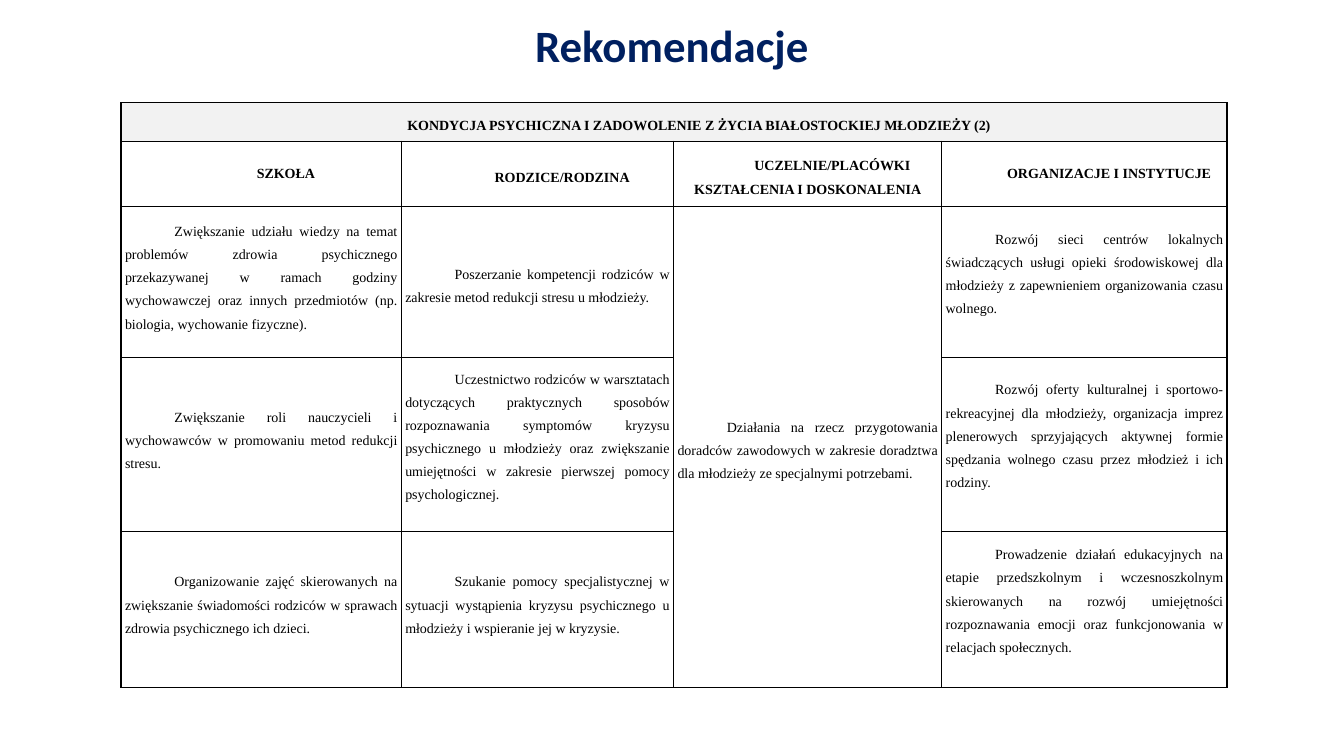
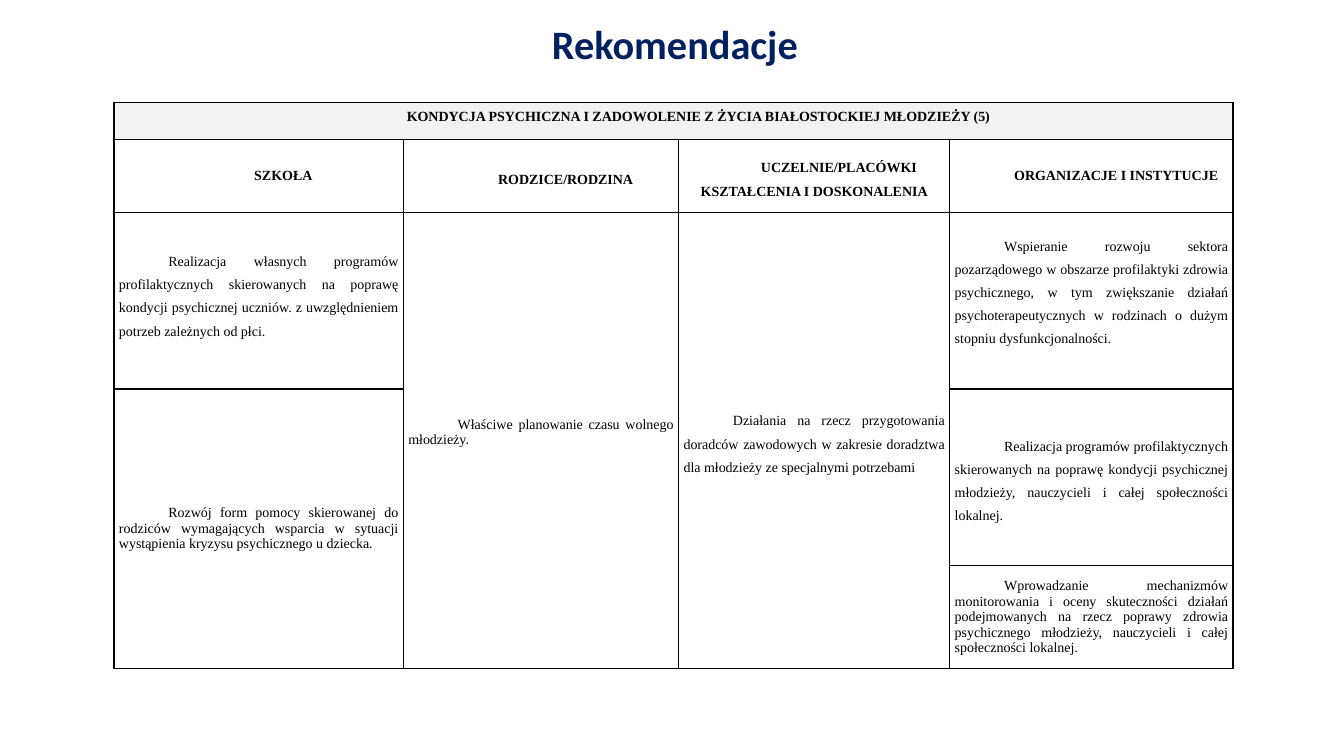
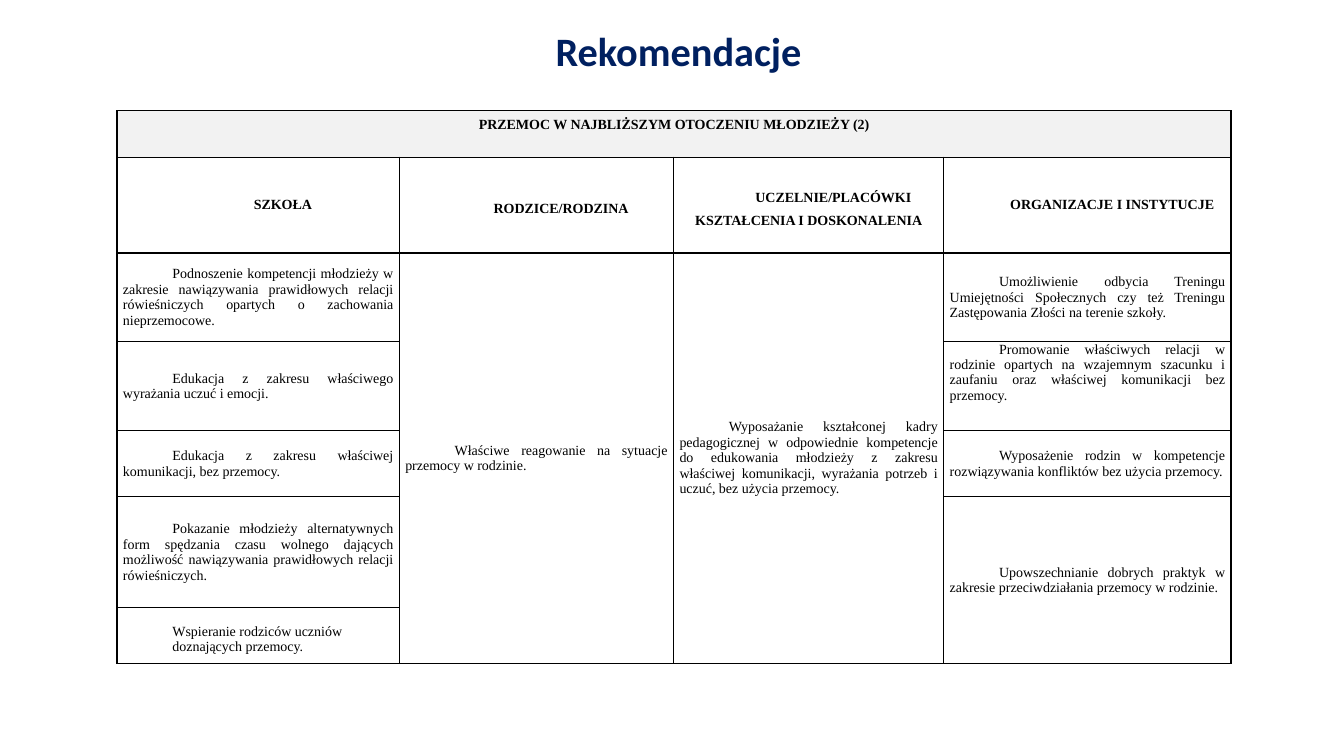
from dataclasses import dataclass

from lxml.etree import SubElement
from pptx import Presentation
from pptx.dml.color import RGBColor
from pptx.enum.text import MSO_ANCHOR, PP_ALIGN
from pptx.oxml.ns import qn
from pptx.slide import Slide
from pptx.table import Table, _Cell
from pptx.util import Inches, Pt

# Shared style
NAVY, BLACK, HEADING_GREY = "002060", "000000", "F2F2F2"
TITLE_FONT, TABLE_FONT = "Calibri", "Times New Roman"
TABLE_SIZE = 10
FIRST_LINE_INDENT = 0.49
BORDER_WIDTH = 1
LINE, WIDE_LINE = 0.16, 0.24  # height of one line at single and 1.5 spacing
SINGLE, WIDE = 1.0, 1.5


@dataclass
class Entry:
    """One table cell; space_below keeps room under its text."""
    row: int
    column: int
    text: str
    spacing: float = WIDE
    space_below: float = 0
    space_above: float = 0
    row_span: int = 1
    column_span: int = 1
    align: PP_ALIGN = PP_ALIGN.JUSTIFY
    anchor: MSO_ANCHOR = MSO_ANCHOR.MIDDLE
    indent: float = FIRST_LINE_INDENT
    bold: bool = False
    fill: str = ""


@dataclass
class TitleBox:
    left: float
    top: float
    width: float
    height: float
    size: float


@dataclass
class Recommendations:
    title: TitleBox
    left: float
    top: float
    columns: list[float]
    rows: list[float]
    side_margin: float
    heading: Entry
    entries: list[Entry]


def heading(text: str, above: float = 0, below: float = 0,
            indent: float = FIRST_LINE_INDENT) -> Entry:
    return Entry(0, 0, text, SINGLE, below, above, column_span=4,
                 align=PP_ALIGN.CENTER, indent=indent, bold=True, fill=HEADING_GREY)


# Column headers, the same in every table
COLUMN_HEADERS = [
    Entry(1, column, text, spacing, align=PP_ALIGN.CENTER, bold=True)
    for column, (text, spacing) in enumerate([
        ("SZKOŁA", SINGLE),
        ("RODZICE/RODZINA", WIDE),
        ("UCZELNIE/PLACÓWKI KSZTAŁCENIA I DOSKONALENIA", WIDE),
        ("ORGANIZACJE I INSTYTUCJE", SINGLE),
    ])
]

# Content
SLIDES = [
    Recommendations(
        TitleBox(2.75, 0.18, 7.83, 0.59, 32), 1.2, 1.02,
        [2.78, 2.7, 2.66, 2.83], [0.38, 0.65, 1.5, 1.6, 1.55], 0.04,
        heading("KONDYCJA PSYCHICZNA I ZADOWOLENIE Z ŻYCIA BIAŁOSTOCKIEJ MŁODZIEŻY (2)",
                above=0.08),
        [
            Entry(2, 0, "Zwiększanie udziału wiedzy na temat problemów zdrowia psychicznego "
                        "przekazywanej w ramach godziny wychowawczej oraz innych przedmiotów "
                        "(np. biologia, wychowanie fizyczne).", space_below=LINE),
            Entry(2, 1, "Poszerzanie kompetencji rodziców w zakresie metod redukcji stresu "
                        "u młodzieży."),
            Entry(2, 2, "Działania na rzecz przygotowania doradców zawodowych w zakresie "
                        "doradztwa dla młodzieży ze specjalnymi potrzebami.", row_span=3),
            Entry(2, 3, "Rozwój sieci centrów lokalnych świadczących usługi opieki "
                        "środowiskowej dla młodzieży z zapewnieniem organizowania czasu "
                        "wolnego.", space_below=WIDE_LINE),
            Entry(3, 0, "Zwiększanie roli nauczycieli i wychowawców w promowaniu metod "
                        "redukcji stresu.", space_below=LINE),
            Entry(3, 1, "Uczestnictwo rodziców w warsztatach dotyczących praktycznych "
                        "sposobów rozpoznawania symptomów kryzysu psychicznego u młodzieży "
                        "oraz zwiększanie umiejętności w zakresie pierwszej pomocy "
                        "psychologicznej.", space_below=0.22),
            Entry(3, 3, "Rozwój oferty kulturalnej i sportowo-rekreacyjnej dla młodzieży, "
                        "organizacja imprez plenerowych sprzyjających aktywnej formie "
                        "spędzania wolnego czasu przez młodzież i ich rodziny.",
                  space_below=WIDE_LINE),
            Entry(4, 0, "Organizowanie zajęć skierowanych na zwiększanie świadomości "
                        "rodziców w sprawach zdrowia psychicznego ich dzieci.",
                  space_below=LINE),
            Entry(4, 1, "Szukanie pomocy specjalistycznej w sytuacji wystąpienia kryzysu "
                        "psychicznego u młodzieży i wspieranie jej w kryzysie.",
                  space_below=LINE),
            Entry(4, 3, "Prowadzenie działań edukacyjnych na etapie przedszkolnym "
                        "i wczesnoszkolnym skierowanych na rozwój umiejętności rozpoznawania "
                        "emocji oraz funkcjonowania w relacjach społecznych.",
                  space_below=WIDE_LINE),
        ]),
    Recommendations(
        TitleBox(2.76, 0.18, 7.87, 0.56, 28.8), 1.13, 1.02,
        [2.87, 2.73, 2.69, 2.81], [0.36, 0.73, 1.75, 1.75, 1.02], 0.05,
        heading("KONDYCJA PSYCHICZNA I ZADOWOLENIE Z ŻYCIA BIAŁOSTOCKIEJ MŁODZIEŻY (5)",
                below=0.08),
        [
            Entry(2, 0, "Realizacja własnych programów profilaktycznych skierowanych na "
                        "poprawę kondycji psychicznej uczniów. z uwzględnieniem potrzeb "
                        "zależnych od płci.", space_below=LINE),
            Entry(2, 1, "Właściwe planowanie czasu wolnego młodzieży.", SINGLE, LINE,
                  row_span=3),
            Entry(2, 2, "Działania na rzecz przygotowania doradców zawodowych w zakresie "
                        "doradztwa dla młodzieży ze specjalnymi potrzebami", row_span=3),
            Entry(2, 3, "Wspieranie rozwoju sektora pozarządowego w obszarze profilaktyki "
                        "zdrowia psychicznego, w tym zwiększanie działań "
                        "psychoterapeutycznych w rodzinach o dużym stopniu "
                        "dysfunkcjonalności.", space_below=WIDE_LINE),
            Entry(3, 0, "Rozwój form pomocy skierowanej do rodziców wymagających wsparcia "
                        "w sytuacji wystąpienia kryzysu psychicznego u dziecka.", SINGLE,
                  row_span=2),
            Entry(3, 3, "Realizacja programów profilaktycznych skierowanych na poprawę "
                        "kondycji psychicznej młodzieży, nauczycieli i całej społeczności "
                        "lokalnej."),
            Entry(4, 3, "Wprowadzanie mechanizmów monitorowania i oceny skuteczności działań "
                        "podejmowanych na rzecz poprawy zdrowia psychicznego młodzieży, "
                        "nauczycieli i całej społeczności lokalnej.", SINGLE),
        ]),
    Recommendations(
        TitleBox(2.77, 0.25, 7.92, 0.56, 28.8), 1.16, 1.1,
        [2.8, 2.72, 2.68, 2.85], [0.46, 0.95, 0.88, 0.88, 0.66, 1.1, 0.55], 0.06,
        heading("PRZEMOC W NAJBLIŻSZYM OTOCZENIU MŁODZIEŻY (2)", below=0.18, indent=0),
        [
            Entry(2, 0, "Podnoszenie kompetencji młodzieży w zakresie nawiązywania "
                        "prawidłowych relacji rówieśniczych opartych o zachowania "
                        "nieprzemocowe.", SINGLE),
            Entry(2, 1, "Właściwe reagowanie na sytuacje przemocy w rodzinie.", SINGLE,
                  row_span=5),
            Entry(2, 2, "Wyposażanie kształconej kadry pedagogicznej w odpowiednie "
                        "kompetencje do edukowania młodzieży z zakresu właściwej "
                        "komunikacji, wyrażania potrzeb i uczuć, bez użycia przemocy.",
                  SINGLE, row_span=5),
            Entry(2, 3, "Umożliwienie odbycia Treningu Umiejętności Społecznych czy też "
                        "Treningu Zastępowania Złości na terenie szkoły.", SINGLE),
            Entry(3, 0, "Edukacja z zakresu właściwego wyrażania uczuć i emocji.", SINGLE),
            Entry(3, 3, "Promowanie właściwych relacji w rodzinie opartych na wzajemnym "
                        "szacunku i zaufaniu oraz właściwej komunikacji bez przemocy.",
                  SINGLE, anchor=MSO_ANCHOR.TOP),
            Entry(4, 0, "Edukacja z zakresu właściwej komunikacji, bez przemocy.", SINGLE),
            Entry(4, 3, "Wyposażenie rodzin w kompetencje rozwiązywania konfliktów bez "
                        "użycia przemocy.", SINGLE),
            Entry(5, 0, "Pokazanie młodzieży alternatywnych form spędzania czasu wolnego "
                        "dających możliwość nawiązywania prawidłowych relacji "
                        "rówieśniczych.", SINGLE),
            Entry(5, 3, "Upowszechnianie dobrych praktyk w zakresie przeciwdziałania "
                        "przemocy w rodzinie.", SINGLE, row_span=2),
            Entry(6, 0, "Wspieranie rodziców uczniów\ndoznających przemocy."),
        ]),
]


def color(value: str) -> RGBColor:
    return RGBColor.from_string(value)


def style_span(span, font: str, size: float, ink: str, bold: bool) -> None:
    span.font.name = font
    span.font.size = Pt(size)
    span.font.bold = bold
    span.font.color.rgb = color(ink)


def add_title(page: Slide, title: TitleBox) -> None:
    box = page.shapes.add_textbox(Inches(title.left), Inches(title.top),
                                  Inches(title.width), Inches(title.height))
    frame = box.text_frame
    frame.word_wrap = True
    frame.vertical_anchor = MSO_ANCHOR.MIDDLE
    frame.text = "Rekomendacje"
    para = frame.paragraphs[0]
    para.alignment = PP_ALIGN.CENTER
    para.line_spacing = 0.9
    style_span(para.runs[0], TITLE_FONT, title.size, NAVY, True)


def prepare_cell(cell: _Cell, side_margin: float) -> None:
    """Set margins, black borders and an empty fill."""
    cell.margin_left = cell.margin_right = Inches(side_margin)
    cell.margin_top = cell.margin_bottom = 0
    properties = cell._tc.get_or_add_tcPr()
    for side in ("a:lnL", "a:lnR", "a:lnT", "a:lnB"):
        line = SubElement(properties, qn(side), w=str(Pt(BORDER_WIDTH)))
        SubElement(SubElement(line, qn("a:solidFill")), qn("a:srgbClr"), val=BLACK)
    cell.fill.background()


def fill_cell(table: Table, entry: Entry) -> None:
    cell = table.cell(entry.row, entry.column)
    if entry.row_span > 1 or entry.column_span > 1:
        cell.merge(table.cell(entry.row + entry.row_span - 1,
                              entry.column + entry.column_span - 1))
    cell.vertical_anchor = entry.anchor
    cell.margin_top = Inches(entry.space_above)
    cell.margin_bottom = Inches(entry.space_below)
    if entry.fill:
        cell.fill.solid()
        cell.fill.fore_color.rgb = color(entry.fill)
    cell.text_frame.text = entry.text
    for index, para in enumerate(cell.text_frame.paragraphs):
        para.alignment = entry.align
        para.line_spacing = SINGLE if index else entry.spacing
        para._p.get_or_add_pPr().set("indent", str(Inches(entry.indent)))
        style_span(para.runs[0], TABLE_FONT, TABLE_SIZE, BLACK, entry.bold)


def add_recommendations(page: Slide, content: Recommendations) -> None:
    frame = page.shapes.add_table(
        len(content.rows), len(content.columns), Inches(content.left), Inches(content.top),
        Inches(sum(content.columns)), Inches(sum(content.rows)))
    table = frame.table
    table.first_row = table.horz_banding = False
    for column, width in zip(table.columns, content.columns):
        column.width = Inches(width)
    for row, height in zip(table.rows, content.rows):
        row.height = Inches(height)
    for cell in table.iter_cells():
        prepare_cell(cell, content.side_margin)
    for entry in [content.heading, *COLUMN_HEADERS, *content.entries]:
        fill_cell(table, entry)


def main() -> None:
    deck = Presentation()
    deck.slide_width, deck.slide_height = Inches(13.33), Inches(7.5)
    for content in SLIDES:
        page = deck.slides.add_slide(deck.slide_layouts[6])
        add_title(page, content.title)
        add_recommendations(page, content)
    deck.save("out.pptx")


if __name__ == "__main__":
    main()
